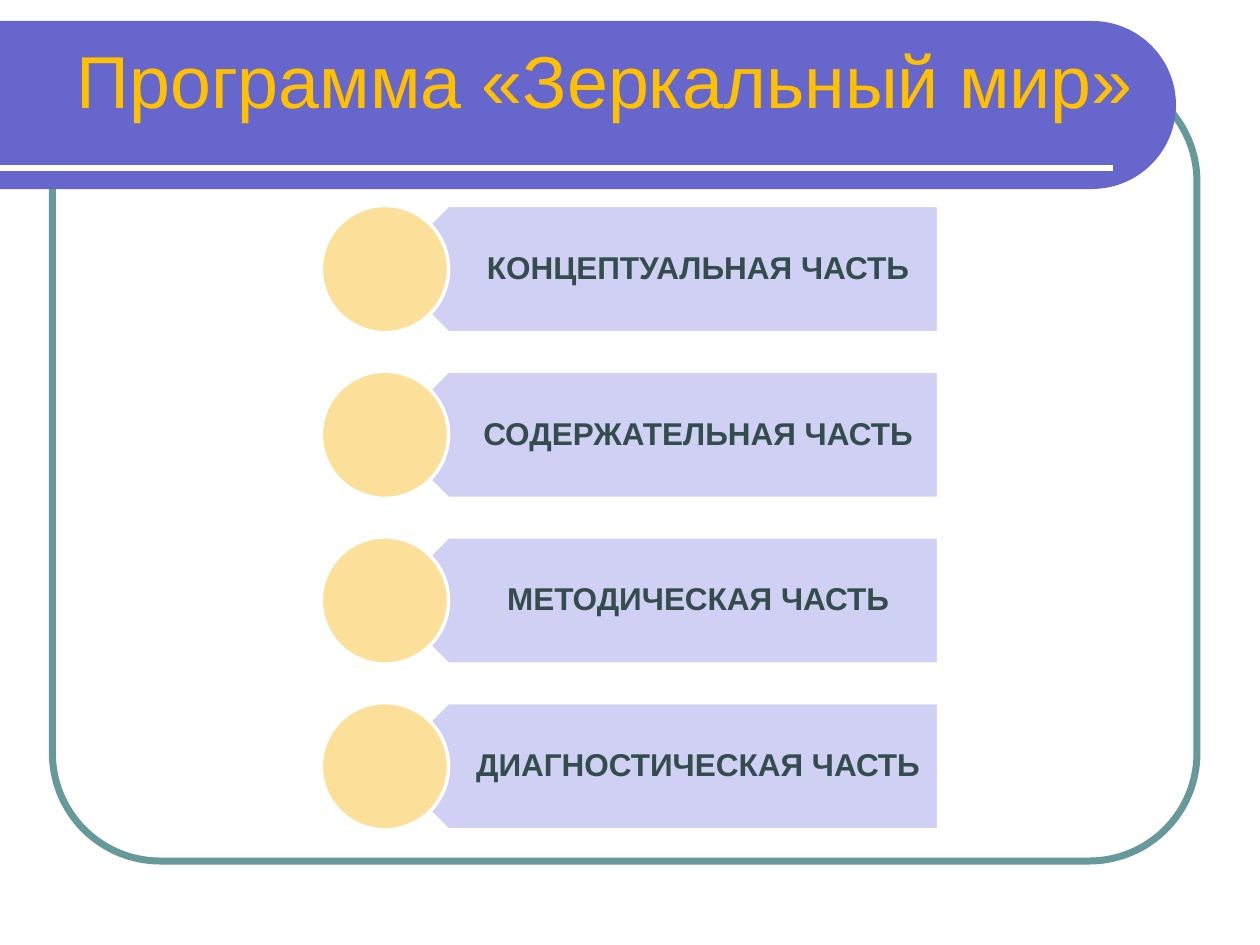
import math

import pptx
import pptx.dml.color
import pptx.enum.shapes
import pptx.enum.text
import pptx.util
from lxml import etree

Pt = pptx.util.Pt
SHAPE = pptx.enum.shapes.MSO_SHAPE
ALIGN = pptx.enum.text.PP_ALIGN

WHITE = "FFFFFF"
PARTS = [
    "КОНЦЕПТУАЛЬНАЯ ЧАСТЬ",
    "СОДЕРЖАТЕЛЬНАЯ ЧАСТЬ",
    "МЕТОДИЧЕСКАЯ ЧАСТЬ",
    "ДИАГНОСТИЧЕСКАЯ ЧАСТЬ",
]
FIRST_TOP, PITCH, ROW_HEIGHT = 117.4, 94.7, 72.7


def color(hex_string):
    return pptx.dml.color.RGBColor.from_string(hex_string)


def paint(shape, fill=None, line=None, line_width=0):
    shape.shadow.inherit = False
    if fill:
        shape.fill.solid()
        shape.fill.fore_color.rgb = color(fill)
    else:
        shape.fill.background()
    if line:
        shape.line.color.rgb = color(line)
        shape.line.width = Pt(line_width)
    else:
        shape.line.fill.background()


def add_preset(slide, kind, box, **style):
    shape = slide.shapes.add_shape(kind, *map(Pt, box))
    paint(shape, **style)
    return shape


def add_label(slide, text, box, insets, size, hex_color, bold=False, align=ALIGN.LEFT):
    """Add one line of vertically centred text; insets run left, top, right, bottom."""
    label = slide.shapes.add_textbox(*map(Pt, box))
    frame = label.text_frame
    frame.word_wrap = True
    frame.vertical_anchor = pptx.enum.text.MSO_ANCHOR.MIDDLE
    frame.margin_left, frame.margin_top, frame.margin_right, frame.margin_bottom = map(Pt, insets)
    paragraph = frame.paragraphs[0]
    paragraph.alignment = align
    run = paragraph.add_run()
    run.text = text
    run.font.name = "Arial"
    run.font.size = Pt(size)
    run.font.bold = bold
    run.font.color.rgb = color(hex_color)
    return paragraph


def add_banner(slide, top, right, height):
    """Add a band from the left slide edge that ends in a half circle."""
    radius = height / 2
    angles = [math.radians(degrees) for degrees in range(-90, 91, 3)]
    arc = [
        (Pt(right - radius + radius * math.cos(a)), Pt(top + radius + radius * math.sin(a)))
        for a in angles
    ]
    builder = slide.shapes.build_freeform(0, Pt(top))
    builder.add_line_segments(arc + [(0, Pt(top + height))], close=True)
    paint(builder.convert_to_shape(), fill="6666CC")


def add_rule(slide, y, right):
    rule = slide.shapes.add_connector(
        pptx.enum.shapes.MSO_CONNECTOR.STRAIGHT, 0, Pt(y), Pt(right), Pt(y)
    )
    rule.line.color.rgb = color(WHITE)
    rule.line.width = Pt(3)
    etree.SubElement(rule._element.spPr, pptx.oxml.ns.qn("a:effectLst"))


def add_part(slide, text, top):
    outline = {"line": WHITE, "line_width": 2}
    plate = add_preset(
        slide, SHAPE.PENTAGON, (219.6, top, 316.8, ROW_HEIGHT), fill="D0D0F5", **outline
    )
    plate.rotation = 180
    paragraph = add_label(
        slide, text, (238.3, top, 298.8, ROW_HEIGHT), (32.4, 5, 10, 5),
        18, "334C4C", bold=True, align=ALIGN.CENTER,
    )
    paragraph.line_spacing = 0.9
    add_preset(slide, SHAPE.OVAL, (183.6, top, ROW_HEIGHT, ROW_HEIGHT), fill="FCE09A", **outline)


def main():
    presentation = pptx.Presentation()
    presentation.slide_width, presentation.slide_height = Pt(720), Pt(540)
    slide = presentation.slides.add_slide(presentation.slide_layouts[6])

    frame = add_preset(
        slide, SHAPE.ROUNDED_RECTANGLE, (30, 42, 654, 450), line="669999", line_width=4
    )
    frame.adjustments[0] = 0.137
    add_banner(slide, top=12, right=672, height=96)
    add_rule(slide, y=96, right=636)
    add_label(
        slide, "Программа «Зеркальный мир»", (36.7, 0, 648, 90), (7.2, 3.6, 7.2, 3.6),
        42, "FFC000",
    )
    for row, text in enumerate(PARTS):
        add_part(slide, text, FIRST_TOP + row * PITCH)

    presentation.save("out.pptx")


if __name__ == "__main__":
    main()
